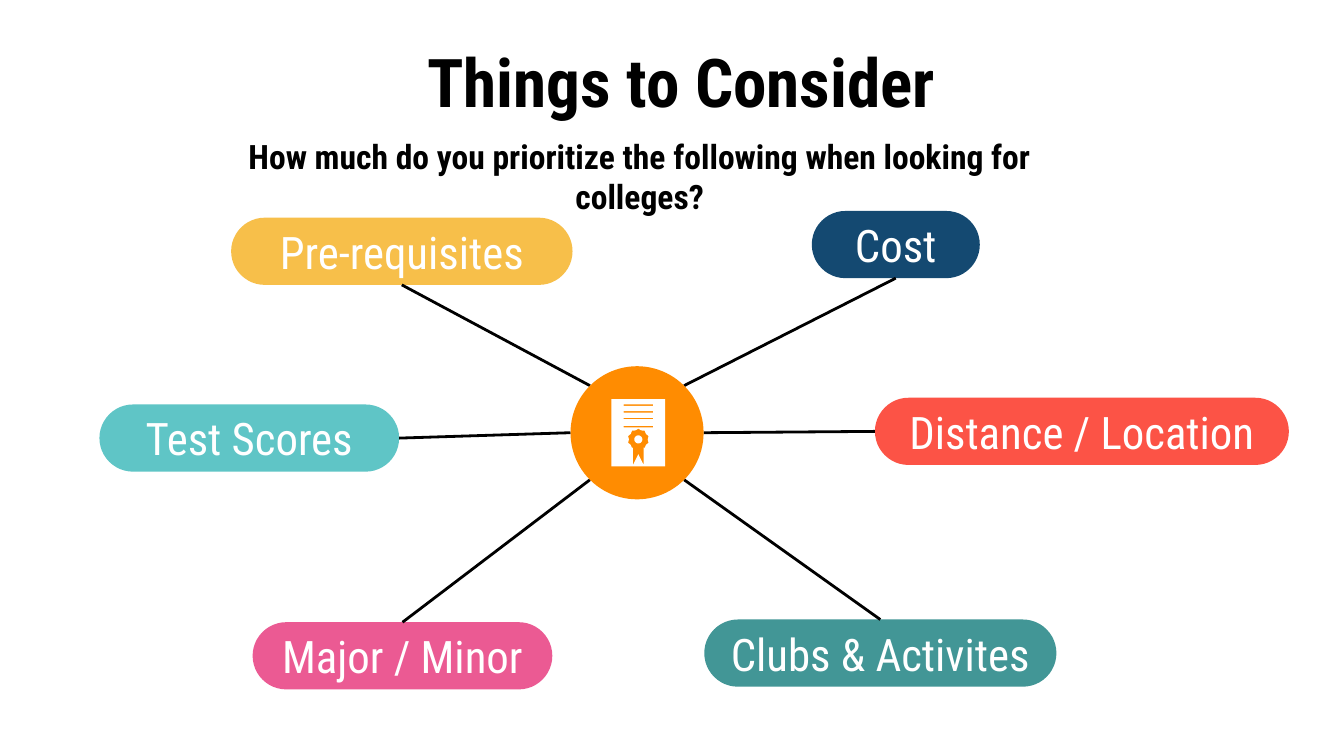
from dataclasses import dataclass
from math import cos, pi, radians, sin

from lxml.etree import SubElement
from pptx import Presentation
from pptx.dml.color import RGBColor
from pptx.enum.shapes import MSO_CONNECTOR, MSO_SHAPE
from pptx.enum.text import MSO_ANCHOR, MSO_AUTO_SIZE, PP_ALIGN
from pptx.oxml.ns import qn
from pptx.shapes.autoshape import Shape
from pptx.slide import Slide
from pptx.text.text import TextFrame
from pptx.util import Inches, Pt

Point = tuple[float, float]


@dataclass(frozen=True)
class Theme:
    font: str = "Roboto Condensed"
    ink: str = "000000"
    paper: str = "FFFFFF"
    hub: str = "FF8C01"
    title_size: int = 36
    question_size: int = 18
    topic_size: int = 24
    line_width: float = 1.5
    inset: float = 0.1


@dataclass(frozen=True)
class Topic:
    label: str
    left: float
    top: float
    width: float
    color: str
    side: int
    hub_angle: int


THEME = Theme()
TOP, LEFT, BOTTOM, RIGHT = range(4)
PILL_HEIGHT = 0.5
HUB_CENTER = (4.74, 3.22)
HUB_DIAMETER = 0.99
SEAL_CENTER = (4.75, 3.27)

TOPICS = [
    Topic("Clubs & Activites", 5.24, 4.61, 2.62, "429696", TOP, 45),
    Topic("Pre-requisites", 1.72, 1.62, 2.54, "F7BF4A", BOTTOM, 225),
    Topic("Test Scores", 0.74, 3.01, 2.23, "5FC5C6", RIGHT, 180),
    Topic("Major / Minor", 1.88, 4.63, 2.23, "EB5A93", TOP, 135),
    Topic("Cost", 6.04, 1.57, 1.25, "144971", BOTTOM, 315),
    Topic("Distance / Location", 6.51, 2.96, 3.08, "FC5346", LEFT, 0),
]


def polar(center: Point, radius: float, angle: float) -> Point:
    return center[0] + radius * cos(angle), center[1] + radius * sin(angle)


def write(frame: TextFrame, text: str, size: int, color: str,
          anchor: MSO_ANCHOR, bold: bool = False) -> None:
    frame.word_wrap = True
    frame.auto_size = MSO_AUTO_SIZE.NONE
    frame.vertical_anchor = anchor
    frame.margin_left = frame.margin_right = Inches(THEME.inset)
    frame.margin_top = frame.margin_bottom = Inches(THEME.inset)
    para = frame.paragraphs[0]
    para.text = text
    para.alignment = PP_ALIGN.CENTER
    para.font.name = THEME.font
    para.font.size = Pt(size)
    para.font.bold = bold
    para.font.color.rgb = RGBColor.from_string(color)


def paint(shape: Shape, color: str) -> None:
    shape.shadow.inherit = False
    shape.fill.solid()
    shape.fill.fore_color.rgb = RGBColor.from_string(color)
    shape.line.fill.background()


def add_heading(page: Slide) -> None:
    title = page.shapes.title
    title.left, title.top = Inches(0.41), Inches(0.2)
    title.width, title.height = Inches(9.32), Inches(0.63)
    write(title.text_frame, "Things to Consider", THEME.title_size,
          THEME.ink, MSO_ANCHOR.TOP, bold=True)
    box = page.shapes.add_textbox(Inches(1.26), Inches(0.91), Inches(7), Inches(0.38))
    write(box.text_frame,
          "How much do you prioritize the following when looking for colleges?",
          THEME.question_size, THEME.ink, MSO_ANCHOR.TOP, bold=True)


def add_topic(page: Slide, topic: Topic) -> None:
    pill = page.shapes.add_shape(
        MSO_SHAPE.ROUNDED_RECTANGLE, Inches(topic.left), Inches(topic.top),
        Inches(topic.width), Inches(PILL_HEIGHT))
    pill.adjustments[0] = 0.5
    paint(pill, topic.color)
    write(pill.text_frame, topic.label, THEME.topic_size, THEME.paper, MSO_ANCHOR.MIDDLE)

    end_x, end_y = polar(HUB_CENTER, HUB_DIAMETER / 2, radians(topic.hub_angle))
    spoke = page.shapes.add_connector(
        MSO_CONNECTOR.STRAIGHT, pill.left, pill.top, Inches(end_x), Inches(end_y))
    spoke.begin_connect(pill, topic.side)
    spoke.line.color.rgb = RGBColor.from_string(THEME.ink)
    spoke.line.width = Pt(THEME.line_width)
    SubElement(spoke._element.spPr, qn("a:effectLst"))


def add_hub(page: Slide) -> None:
    left, top = (Inches(middle - HUB_DIAMETER / 2) for middle in HUB_CENTER)
    hub = page.shapes.add_shape(
        MSO_SHAPE.OVAL, left, top, Inches(HUB_DIAMETER), Inches(HUB_DIAMETER))
    paint(hub, THEME.hub)


def rectangle(left: float, top: float, width: float, height: float) -> list[Point]:
    right, bottom = left + width, top + height
    return [(left, top), (right, top), (right, bottom), (left, bottom)]


def certificate_outlines() -> list[list[Point]]:
    ribbon = [(4.79, 3.33), (4.79, 3.46), (4.75, 3.38), (4.71, 3.46), (4.71, 3.33)]
    scallops = [
        polar(SEAL_CENTER, 0.07 if step % 2 else 0.08, radians(18 * step - 90))
        for step in range(-8, 9)
    ]
    hole = [polar(SEAL_CENTER, 0.03, step * pi / 12) for step in range(24)]
    rules = [rectangle(4.64, top, 0.22, 0.01) for top in (3.01, 3.06, 3.11, 3.17)]
    return [rectangle(4.55, 2.97, 0.4, 0.5), ribbon + scallops, hole, *rules]


def add_certificate(page: Slide) -> None:
    outlines = [[(Inches(x), Inches(y)) for x, y in outline]
                for outline in certificate_outlines()]
    sheet, *cutouts = outlines
    builder = page.shapes.build_freeform(*sheet[0])
    builder.add_line_segments(sheet[1:], close=True)
    for cutout in cutouts:
        builder.move_to(*cutout[0])
        builder.add_line_segments(cutout[1:], close=True)
    paint(builder.convert_to_shape(), THEME.paper)


def main() -> None:
    deck = Presentation()
    deck.slide_width = Inches(10)
    deck.slide_height = deck.slide_width * 9 // 16
    page = deck.slides.add_slide(deck.slide_layouts[5])
    add_heading(page)
    for topic in TOPICS:
        add_topic(page, topic)
    add_hub(page)
    add_certificate(page)
    deck.save("out.pptx")


if __name__ == "__main__":
    main()
